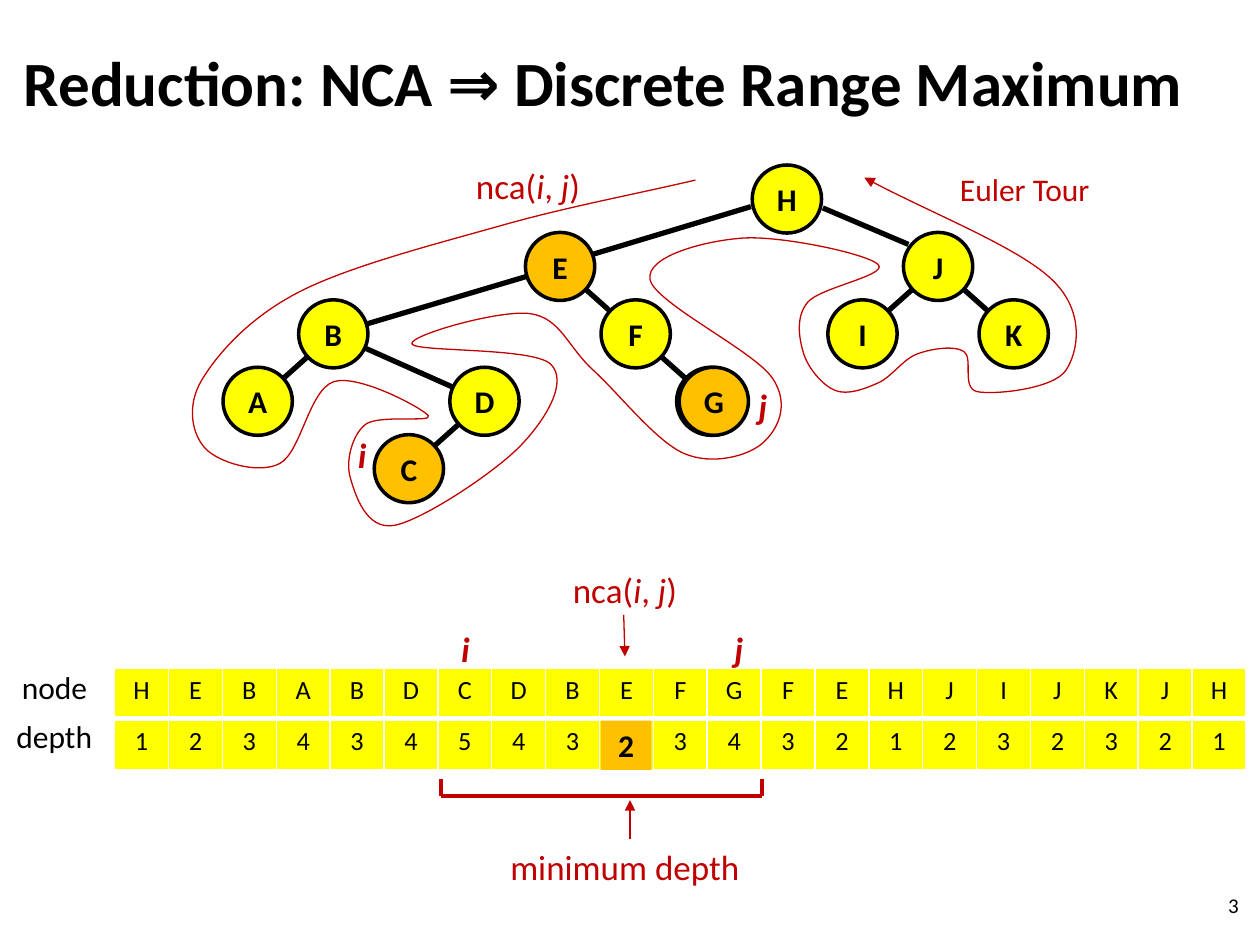
from lxml.etree import SubElement
from pptx import Presentation
from pptx.dml.color import RGBColor
from pptx.enum.shapes import MSO_CONNECTOR, MSO_SHAPE
from pptx.enum.text import MSO_ANCHOR, MSO_AUTO_SIZE, PP_ALIGN
from pptx.oxml.ns import qn
from pptx.util import Inches, Pt

# Content
TITLE = "Reduction: NCA ⇒ Discrete Range Maximum"
DEPTHS = {"A": 4, "B": 3, "C": 5, "D": 4, "E": 2, "F": 3, "G": 4,
          "H": 1, "I": 3, "J": 2, "K": 3}
EDGES = ["AB", "BD", "DC", "JI", "JK", "EB", "EF", "FG"]
ROOT_EDGES = [(6.53, 1.65, 7.21, 1.94), (5.96, 1.64, 4.7, 2.02)]
HIGHLIGHTED = "ECG"
TOUR = "HEBABDCDBEFGFEHJIJKJH"
NCA = [("nca(", False), ("i", True), (", ", False), ("j", True), (")", False)]
TOUR_KNOTS = [
    (5.52, 1.43), (3.98, 1.79), (2.37, 2.32), (1.6, 3.02), (1.63, 3.56),
    (2.22, 3.68), (2.65, 3.03), (3.4, 3.3), (2.9, 3.37), (2.78, 3.79),
    (3.13, 4.17), (4.13, 3.54), (4.37, 2.89), (3.27, 2.73), (4.21, 2.49),
    (4.71, 2.94), (5.43, 3.6), (6.05, 3.52), (6.13, 3), (5.16, 2.22),
    (5.9, 1.89), (6.97, 2.1), (6.41, 2.4), (6.38, 2.81), (6.63, 3.1),
    (6.97, 3.04), (7.28, 2.81), (7.65, 2.79), (7.76, 3.11), (8.46, 2.94),
    (8.35, 2.22), (6.86, 1.41)]
BLACK, RED, YELLOW, ORANGE, WHITE = "000000", "C00000", "FFFF00", "FFC000", "FFFFFF"
LEFT, CENTER, RIGHT = PP_ALIGN.LEFT, PP_ALIGN.CENTER, PP_ALIGN.RIGHT

# (content, box, format)
LABELS = [
    ("Euler Tour", (7.52, 1.3, 1.89, 0.4), dict(color=RED)),
    ("node", (0.04, 5.25, 0.75, 0.4), dict(align=RIGHT)),
    ("depth", (0, 5.64, 0.83, 0.4), dict(align=RIGHT)),
    ("minimum depth", (3.58, 6.66, 2.76, 0.44), dict(size=20, color=RED, align=CENTER)),
    ("3", (7.6, 6.98, 2.33, 0.4), dict(size=12, align=RIGHT, anchor=MSO_ANCHOR.MIDDLE)),
]
LABELS += [(NCA, (x, y, w, 0.44), dict(size=20, color=RED, align=CENTER))
           for x, y, w in [(3.19, 1.26, 2), (3.58, 4.46, 2.76)]]
LABELS += [([(name, True)], (x, y, 0.47, 0.44),
            dict(size=20, color=RED, bold=True, align=CENTER))
           for name, x, y in [("i", 2.64, 3.39), ("j", 5.82, 3),
                              ("i", 3.46, 4.93), ("j", 5.63, 4.93)]]

# Tree grid: columns follow the alphabet, rows follow the depth
NODE_W, NODE_H = 0.55, 0.54
TREE_X, TREE_Y, STEP_X, STEP_Y = 1.77, 1.31, 0.6, 0.535
TABLE_X, TABLE_Y, TABLE_W, TABLE_H = 0.91, 5.3, 8.98, 0.81

prs = Presentation()
prs.slide_width, prs.slide_height = Inches(10), Inches(7.5)
slide = prs.slides.add_slide(prs.slide_layouts[5])
shapes = slide.shapes


def rgb(color):
    return RGBColor.from_string(color)


def inches(values):
    return [Inches(value) for value in values]


def write(frame, content, size=18, color=BLACK, bold=False, align=LEFT, anchor=MSO_ANCHOR.TOP):
    frame.word_wrap = True
    frame.vertical_anchor = anchor
    paragraph = frame.paragraphs[0]
    paragraph.alignment = align
    for words, italic in [(content, False)] if isinstance(content, str) else content:
        run = paragraph.add_run()
        run.text = words
        font = run.font
        font.name, font.size, font.bold, font.italic = "Calibri", Pt(size), bold, italic
        font.color.rgb = rgb(color)


def style_line(line, color, width, arrow=False):
    line.color.rgb = rgb(color)
    line.width = Pt(width)
    if arrow:
        SubElement(line._get_or_add_ln(), qn("a:tailEnd"), type="triangle")


def add_line(ends, color, width, arrow=False):
    connector = shapes.add_connector(MSO_CONNECTOR.STRAIGHT, *inches(ends))
    style_line(connector.line, color, width, arrow)
    SubElement(connector._element.spPr, qn("a:effectLst"))


def add_block(kind, box, content, fill, outlined=True):
    block = shapes.add_shape(kind, *inches(box))
    block.shadow.inherit = False
    block.fill.solid()
    block.fill.fore_color.rgb = rgb(fill)
    if outlined:
        style_line(block.line, BLACK, 2)
    else:
        block.line.fill.background()
    frame = block.text_frame
    frame.margin_left = frame.margin_right = frame.margin_top = frame.margin_bottom = 0
    write(frame, content, bold=True, align=CENTER, anchor=MSO_ANCHOR.MIDDLE)


def node_corner(name):
    return (TREE_X + STEP_X * (ord(name) - ord("A")),
            TREE_Y + STEP_Y * (DEPTHS[name] - 1))


def node_center(name):
    x, y = node_corner(name)
    return x + NODE_W / 2, y + NODE_H / 2


def add_node(name, fill, shift=0):
    x, y = node_corner(name)
    add_block(MSO_SHAPE.OVAL, (x + shift, y, NODE_W, NODE_H), name, fill)


def add_curve(knots):
    """Smooth curve through the knots, each tangent parallel to its neighbours' chord."""
    points = [tuple(inches(knot)) for knot in knots]
    builder = shapes.build_freeform(*points[0])
    builder.add_line_segments(points[1:], close=False)
    curve = builder.convert_to_shape()
    curve.shadow.inherit = False
    curve.fill.background()
    style_line(curve.line, RED, 0.75, arrow=True)
    left, top = (min(axis) for axis in zip(*points))
    points = [(x - left, y - top) for x, y in points]

    def tangent(i):
        before, after = points[max(i - 1, 0)], points[min(i + 1, len(points) - 1)]
        divisor = 6 if 0 < i < len(points) - 1 else 3
        return [(b - a) / divisor for a, b in zip(before, after)]

    for i, segment in enumerate(list(curve._element.iter(qn("a:lnTo")))):
        (x0, y0), (x1, y1) = points[i], points[i + 1]
        (dx0, dy0), (dx1, dy1) = tangent(i), tangent(i + 1)
        outline = segment.getparent()
        outline.remove(segment)
        bezier = SubElement(outline, qn("a:cubicBezTo"))
        for x, y in [(x0 + dx0, y0 + dy0), (x1 - dx1, y1 - dy1), (x1, y1)]:
            SubElement(bezier, qn("a:pt"), x=str(round(x)), y=str(round(y)))


def set_borders(cell, **widths):
    properties = cell._tc.get_or_add_tcPr()
    for i, side in enumerate(("lnL", "lnR", "lnT", "lnB")):
        border = SubElement(properties, qn("a:" + side), w=str(Pt(widths.get(side, 1))))
        fill = SubElement(border, qn("a:solidFill"))
        SubElement(fill, qn("a:srgbClr"), val=WHITE)
        properties.remove(border)
        properties.insert(i, border)


# Title
title = shapes.title
title.left, title.top, title.width, title.height = inches((0.09, 0.29, 9.91, 0.71))
write(title.text_frame, TITLE, size=36, bold=True, anchor=MSO_ANCHOR.MIDDLE)
title.text_frame.auto_size = MSO_AUTO_SIZE.NONE

# Tree and its Euler tour
for parent, child in EDGES:
    add_line(node_center(parent) + node_center(child), BLACK, 3)
for ends in ROOT_EDGES:
    add_line(ends, BLACK, 3)
add_curve(TOUR_KNOTS)
for name in DEPTHS:
    if name not in "EC":
        add_node(name, YELLOW)
for name in HIGHLIGHTED:
    add_node(name, ORANGE, shift=0.02 if name == "G" else 0)

# Node and depth table
table = shapes.add_table(2, len(TOUR), *inches((TABLE_X, TABLE_Y, TABLE_W, TABLE_H))).table
for column in table.columns:
    column.width = Inches(TABLE_W / len(TOUR))
for c, name in enumerate(TOUR):
    for r, (entry, thick_side) in enumerate([(name, "lnB"), (str(DEPTHS[name]), "lnT")]):
        cell = table.cell(r, c)
        cell.fill.solid()
        cell.fill.fore_color.rgb = rgb(YELLOW)
        write(cell.text_frame, entry, size=15, align=CENTER)
        set_borders(cell, **{thick_side: 3})
add_block(MSO_SHAPE.RECTANGLE, (4.77, 5.72, 0.4, 0.39), "2", ORANGE, outlined=False)

# Range bracket and arrows
for ends in [(3.5, 6.32, 6.05, 6.32), (3.5, 6.18, 3.5, 6.32), (6.05, 6.18, 6.05, 6.32)]:
    add_line(ends, RED, 2.25)
for ends in [(5, 6.66, 5, 6.35), (4.95, 4.88, 4.96, 5.21)]:
    add_line(ends, RED, 0.75, arrow=True)

# Labels
for content, box, style in LABELS:
    write(shapes.add_textbox(*inches(box)).text_frame, content, **style)

prs.save("out.pptx")
